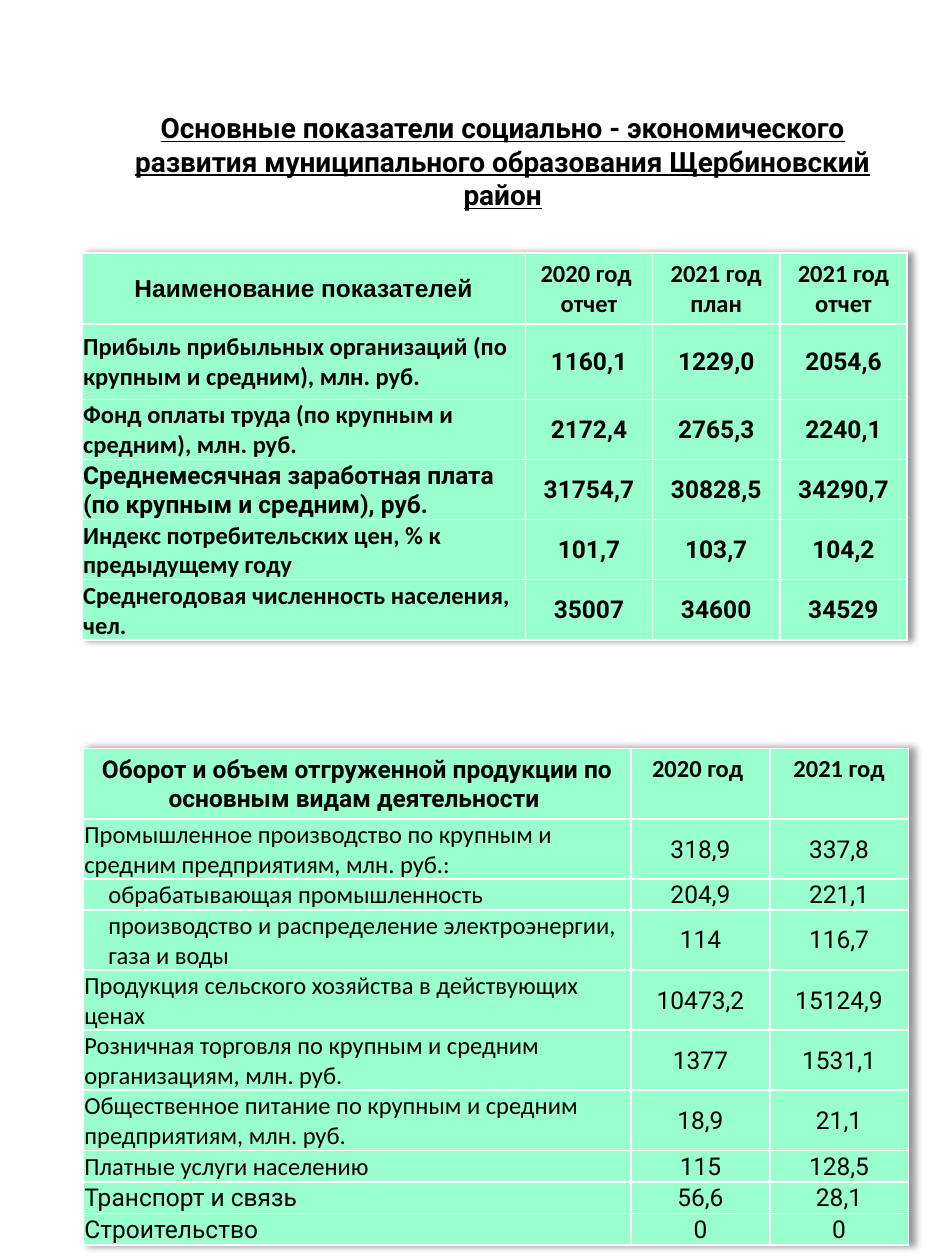
from lxml import etree
from pptx import Presentation
from pptx.dml.color import RGBColor
from pptx.enum.text import MSO_ANCHOR, PP_ALIGN
from pptx.oxml.ns import qn
from pptx.util import Inches, Pt

COLORS = {"text": "000000", "cell": "99FFCC", "border": "FFFFFF", "shadow": "000000"}
TITLE = ("Основные показатели социально - экономического развития "
         "муниципального образования Щербиновский район")

# Each row: height, font of the label, label, values
INDICATORS = [
    (0.56, "Arial", "Наименование показателей",
     ["2020 год \vотчет", "2021 год\vплан", "2021 год\vотчет"]),
    (0.6, "Calibri", "Прибыль прибыльных организаций (по крупным и средним), млн. руб.",
     ["1160,1", "1229,0", "2054,6"]),
    (0.41, "Calibri", "Фонд оплаты труда (по крупным и средним), млн. руб.",
     ["2172,4", "2765,3", "2240,1"]),
    (0.46, "Roboto", "Среднемесячная заработная плата (по крупным и средним), руб.",
     ["31754,7", "30828,5", "34290,7"]),
    (0.25, "Calibri", "Индекс потребительских цен, % к предыдущему году",
     ["101,7", "103,7", "104,2"]),
    (0.25, "Calibri", "Среднегодовая численность населения, чел.",
     ["35007", "34600", "34529"]),
]
TURNOVER = [
    (0.56, "Roboto", "Оборот и объем отгруженной продукции по основным видам деятельности ",
     ["2020 год \v", "2021 год\v"]),
    (0.23, "Calibri", "Промышленное производство по крупным и средним предприятиям, млн. руб.:",
     ["318,9", "337,8"]),
    (0.22, "Calibri", "обрабатывающая промышленность", ["204,9", "221,1"]),
    (0.22, "Calibri", "производство и распределение электроэнергии, газа и воды",
     ["114", "116,7"]),
    (0.25, "Calibri", "Продукция сельского хозяйства в действующих ценах",
     ["10473,2", "15124,9"]),
    (0.25, "Calibri", "Розничная торговля по крупным и средним организациям, млн. руб.",
     ["1377", "1531,1"]),
    (0.25, "Calibri", "Общественное питание по крупным и средним предприятиям, млн. руб.",
     ["18,9", "21,1"]),
    (0.25, "Calibri", "Платные услуги населению", ["115", "128,5"]),
    (0.25, "Roboto", "Транспорт и связь", ["56,6", "28,1"]),
    (0.25, "Roboto", "Строительство", ["0", "0"]),
]
TURNOVER_SUBROWS = (2, 3)


def set_font(para, name, size, bold):
    font = para.font
    font.name, font.size, font.bold = name, Pt(size), bold
    font.color.rgb = RGBColor.from_string(COLORS["text"])


def add_color(parent, color):
    return etree.SubElement(parent, qn("a:srgbClr"), val=color)


def add_borders(cell):
    props = cell._tc.get_or_add_tcPr()
    for index, side in enumerate(("a:lnL", "a:lnR", "a:lnT", "a:lnB")):
        line = etree.Element(qn(side), w=str(Pt(1)))
        add_color(etree.SubElement(line, qn("a:solidFill")), COLORS["border"])
        props.insert(index, line)


def add_shadow(table):
    effects = etree.Element(qn("a:effectLst"))
    shadow = etree.SubElement(effects, qn("a:outerShdw"), blurRad=str(Pt(4)),
                              dist=str(Pt(3)), dir="0", algn="l", rotWithShape="0")
    etree.SubElement(add_color(shadow, COLORS["shadow"]), qn("a:alpha"), val="40000")
    table._tbl.tblPr.insert(0, effects)


def fill_cell(cell, text, font_name, bold, align, indent=0):
    cell.fill.solid()
    cell.fill.fore_color.rgb = RGBColor.from_string(COLORS["cell"])
    add_borders(cell)
    cell.vertical_anchor = MSO_ANCHOR.MIDDLE
    cell.margin_left = cell.margin_right = cell.margin_top = Inches(0.01)
    cell.margin_bottom = 0
    para = cell.text_frame.paragraphs[0]
    para.text = text
    para.alignment = align
    set_font(para, font_name, 14, bold)
    if indent:
        props = para._p.get_or_add_pPr()
        props.set("marL", str(Inches(indent)))
        props.set("indent", "0")


def add_data_table(page, left, top, widths, rows, bold_body, subrows=()):
    heights = [row[0] for row in rows]
    table = page.shapes.add_table(len(rows), len(widths), Inches(left), Inches(top),
                                  Inches(sum(widths)), Inches(sum(heights))).table
    table.first_row = table.horz_banding = False
    add_shadow(table)
    for column, width in zip(table.columns, widths):
        column.width = Inches(width)
    for index, (height, label_font, label, values) in enumerate(rows):
        header = index == 0
        bold = header or bold_body
        table.rows[index].height = Inches(height)
        fill_cell(table.cell(index, 0), label, label_font, bold,
                  PP_ALIGN.CENTER if header else PP_ALIGN.LEFT,
                  0.19 if index in subrows else 0)
        for column, value in enumerate(values, 1):
            fill_cell(table.cell(index, column), value,
                      "Calibri" if header else "Roboto", bold, PP_ALIGN.CENTER)


deck = Presentation()
deck.slide_width, deck.slide_height = Inches(7.5), Inches(10)
page = deck.slides.add_slide(deck.slide_layouts[6])

title = page.shapes.add_textbox(Inches(0.76), Inches(0.83), Inches(6.46), Inches(0.64))
title.text_frame.word_wrap = True
para = title.text_frame.paragraphs[0]
para.text = TITLE
para.alignment = PP_ALIGN.CENTER
set_font(para, "Roboto", 16, True)
para.font.underline = True

add_data_table(page, 0.66, 5.94, [4.35, 1.1, 1.1], TURNOVER, False, TURNOVER_SUBROWS)
add_data_table(page, 0.65, 2.01, [3.52, 1.01, 1.01, 1.01], INDICATORS, True)

deck.save("out.pptx")
